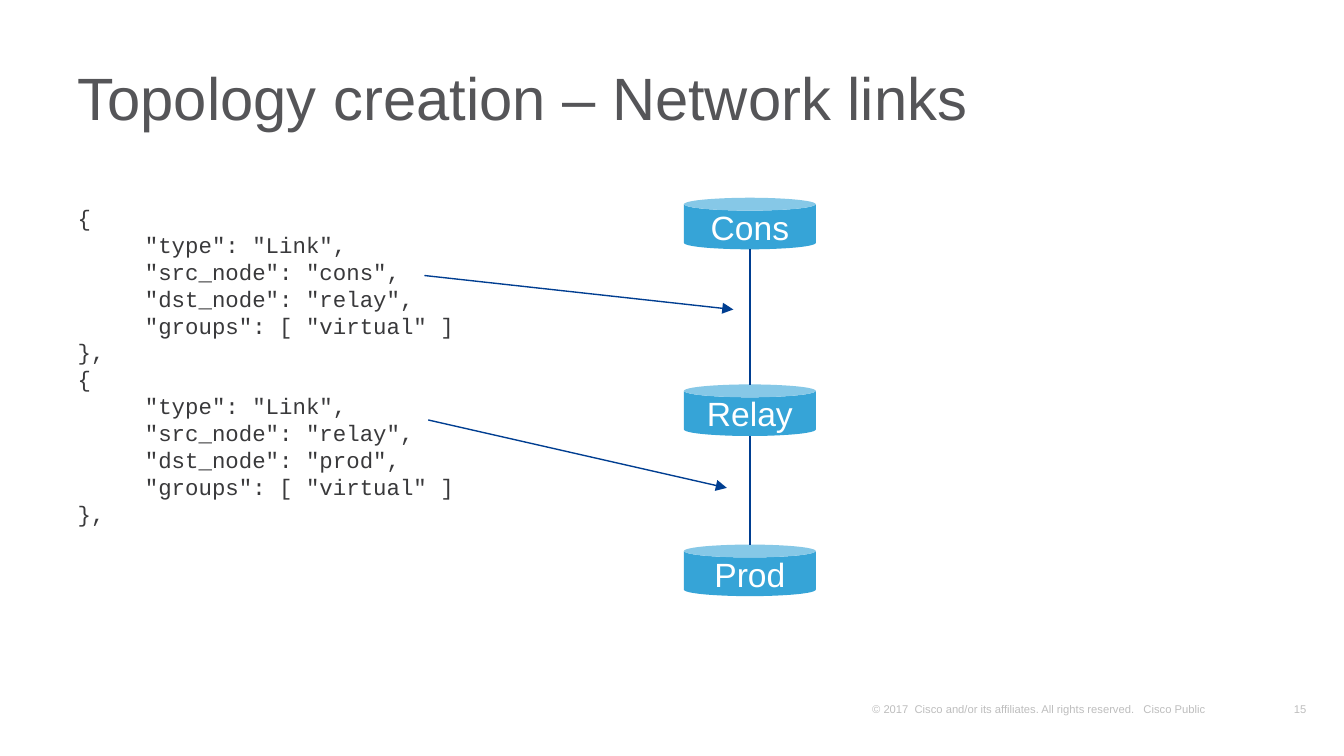
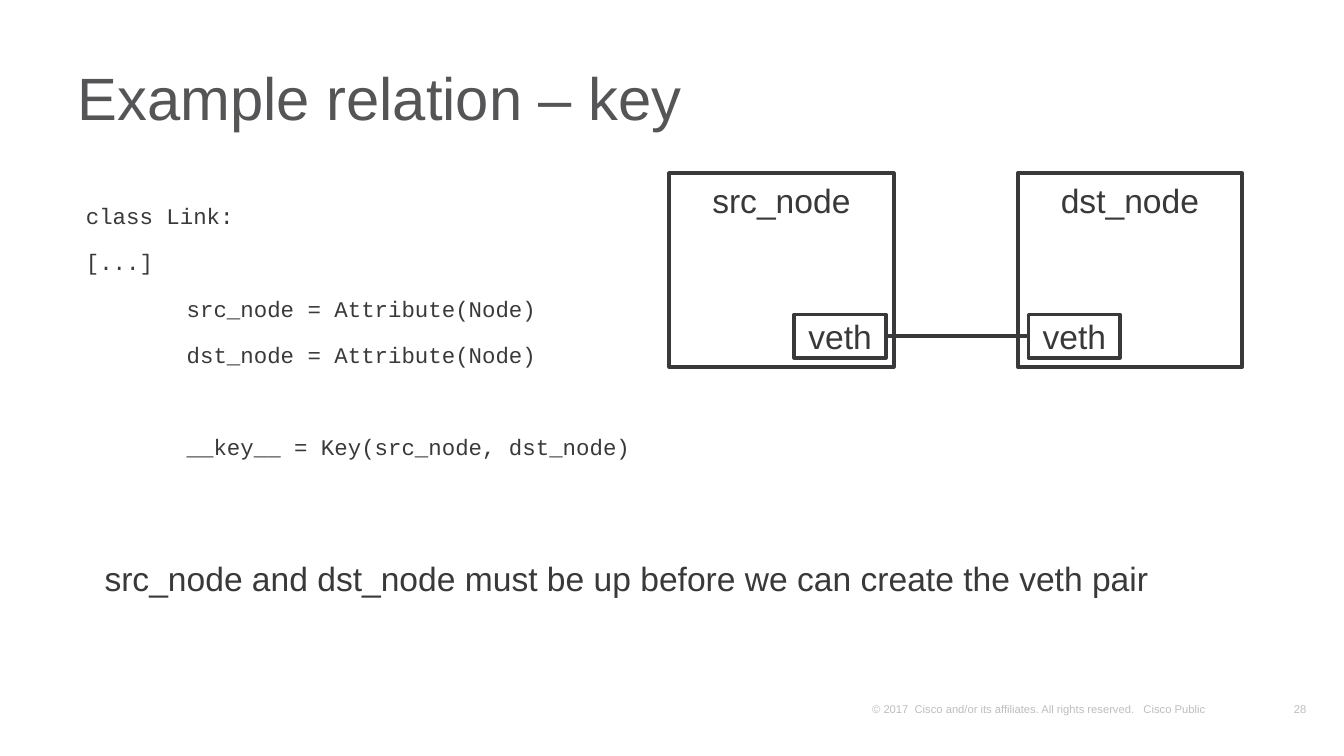
"""Two slides on network links: topology creation and the relation key."""
from lxml import etree
from pptx import Presentation
from pptx import util as u
from pptx.dml import color
from pptx.enum import shapes, text
from pptx.oxml import ns

HUES = {"ink": "39393B", "title": "555558", "foot": "000000", "can": "36A4D7",
        "link": "003E91", "white": "FFFFFF"}
SANS, MONO = "Arial", "Courier New"
MID, LOW = text.MSO_ANCHOR.MIDDLE, text.MSO_ANCHOR.BOTTOM
FOOT = "© 2017  Cisco and/or its affiliates. All rights reserved.   Cisco Public"
HEAD = (34.56, 26.64, 657.36, 57.6)
BASE = (462.24, 373.68, 226.8, 12.24)


def rgb(hue):
    """Return the named colour."""
    return color.RGBColor.from_string(HUES[hue])


def sub(node, tag, **attrs):
    """Add a child element with attributes."""
    return etree.SubElement(node, ns.qn(tag), attrs)


def place(box):
    """Turn a box in points into lengths."""
    return [u.Pt(n) for n in box]


def style(para, size, hue, font=SANS, align=None):
    """Format the runs of a paragraph."""
    para.alignment = align
    for run in para.runs:
        run.font.size, run.font.name = u.Pt(size), font
        run.font.color.rgb = rgb(hue)


def label(slide, box, words, size, hue, anchor=None, align=None, wrap=True):
    """Add a text box with one line of text."""
    frame = slide.shapes.add_textbox(*place(box)).text_frame
    frame.word_wrap = wrap
    frame.vertical_anchor = anchor
    frame.text = words
    style(frame.paragraphs[0], size, hue, align=align)
    return frame


def node(slide, kind, box, words, fill, hue, edge=None, anchor=MID):
    """Add a shape with a centred name."""
    item = slide.shapes.add_shape(kind, *place(box))
    item.shadow.inherit = False
    item.fill.solid()
    item.fill.fore_color.rgb = rgb(fill)
    if edge:
        item.line.color.rgb = rgb(edge)
        item.line.width = u.Pt(2)
    else:
        item.line.fill.background()
    item.text_frame.text = words
    item.text_frame.vertical_anchor = anchor
    style(item.text_frame.paragraphs[0], 18, hue, align=text.PP_ALIGN.CENTER)
    return item


def wire(slide, ends, hue, width, arrow=False):
    """Add a straight line, with an arrowhead if asked."""
    line = slide.shapes.add_connector(shapes.MSO_CONNECTOR.STRAIGHT, *place(ends))
    line.line.color.rgb = rgb(hue)
    line.line.width = u.Pt(width)
    props = line._element.spPr
    if arrow:
        sub(props.find(ns.qn("a:ln")), "a:tailEnd", type="triangle")
    sub(props, "a:effectLst")
    return line


def code(slide, box, rows, left=0, step=36, lead=None, gap=0):
    """Add code from (depth, blank lines above, words) rows."""
    frame = slide.shapes.add_textbox(*place(box)).text_frame
    frame.word_wrap = True
    for i, (depth, blank, words) in enumerate(rows):
        para = frame.add_paragraph() if i else frame.paragraphs[0]
        para.text = words
        props = para._p.get_or_add_pPr()
        props.set("marL", str(u.Pt(left + depth * step)))
        props.set("indent", "0")
        if lead:
            para.line_spacing = lead
        if i and gap:
            para.space_before = u.Pt(gap + blank * (gap + 13.7))
        style(para, 12, "ink", MONO)


def footer(slide, box, page):
    """Add the copyright line and the page number after it."""
    x, y, w, h = box
    right = text.PP_ALIGN.RIGHT
    frames = (label(slide, (x + w - 1.44, y, 17.28, h), page, 6, "foot", LOW, right, False),
              label(slide, box, FOOT, 6, "foot", LOW))
    for frame in frames:
        frame.margin_left = frame.margin_right = u.Pt(5)
        frame.margin_top = frame.margin_bottom = u.Pt(2.5)
        for tone in frame._txBody.iter(ns.qn("a:srgbClr")):
            sub(tone, "a:alpha", val="25000")


def start(deck, title, page):
    """Add a slide with its title and footer."""
    slide = deck.slides.add_slide(deck.slide_layouts[6])
    footer(slide, BASE, page)
    frame = label(slide, HEAD, title, 32, "title", MID)
    frame.paragraphs[0].line_spacing = 0.8
    return slide


def chain(slide, box):
    """Stack three cans, join them and point at the links."""
    x, y, w, h = box
    tops = (y, y + 100, y + 185.8)
    for top, name in zip(tops, ("Cons", "Relay", "Prod")):
        node(slide, shapes.MSO_SHAPE.CAN, (x, top, w, h), name, "can", "white")
    mid = x + w / 2
    for top, end in zip(tops, tops[1:]):
        wire(slide, (mid, top + h, mid, end), "link", 0.75)
    for x1, y1, x2, y2 in ((-139, 41.6, 26.5, 59.8), (-137, 119, 23, 155.4)):
        wire(slide, (x + x1, y + y1, x + x2, y + y2), "link", 0.75, True)


def pair(slide, box):
    """Draw two nodes whose inner ports are joined."""
    x, y, w, h = box
    rect, wide = shapes.MSO_SHAPE.RECTANGLE, 120.3
    for left, name in ((x + w - wide, "dst_node"), (x, "src_node")):
        node(slide, rect, (left, y, wide, h), name, "white", "ink", "ink",
             text.MSO_ANCHOR.TOP)
    dst, src = [node(slide, rect, (x + left, y + 75.6, 49, 23.2), "veth",
                     "white", "ink", "ink") for left in (192.5, 67)]
    line = wire(slide, (0, 0, 0, 0), "ink", 2)
    line.begin_connect(src, 3)
    line.end_connect(dst, 1)


def entry(src, dst):
    """Return the code rows of one link."""
    return [(0, 0, "{"), (1, 0, '"type": "Link",'),
            (1, 0, f'"src_node": "{src}",'), (1, 0, f'"dst_node": "{dst}",'),
            (1, 0, '"groups": [ "virtual" ]'), (0, 0, "},")]


def main():
    """Build and save the deck."""
    deck = Presentation()
    deck.slide_width, deck.slide_height = u.Pt(720), u.Pt(405)

    slide = start(deck, "Topology creation – Network links", "15")
    code(slide, (34.56, 105.84, 657.36, 249), entry("cons", "relay") + entry("relay", "prod"))
    chain(slide, (366.4, 106, 70.6, 27.6))

    slide = start(deck, "Example relation – key", "28")
    rows = [(0, 0, "class Link:"), (0, 0, "[...]"),
            (1, 0, "src_node = Attribute(Node)"), (1, 0, "dst_node = Attribute(Node)"),
            (1, 1, "__key__ = Key(src_node, dst_node)")]
    code(slide, (34.56, 105.84, 313.92, 148.3), rows, 4.4, 54, 0.95, 11.1)
    pair(slide, (358.5, 92.9, 307, 103.7))
    label(slide, (48.96, 295.2, 628.56, 28.8),
          "src_node and dst_node must be up before we can create the veth pair", 18, "ink")
    deck.save("out.pptx")


if __name__ == "__main__":
    main()
